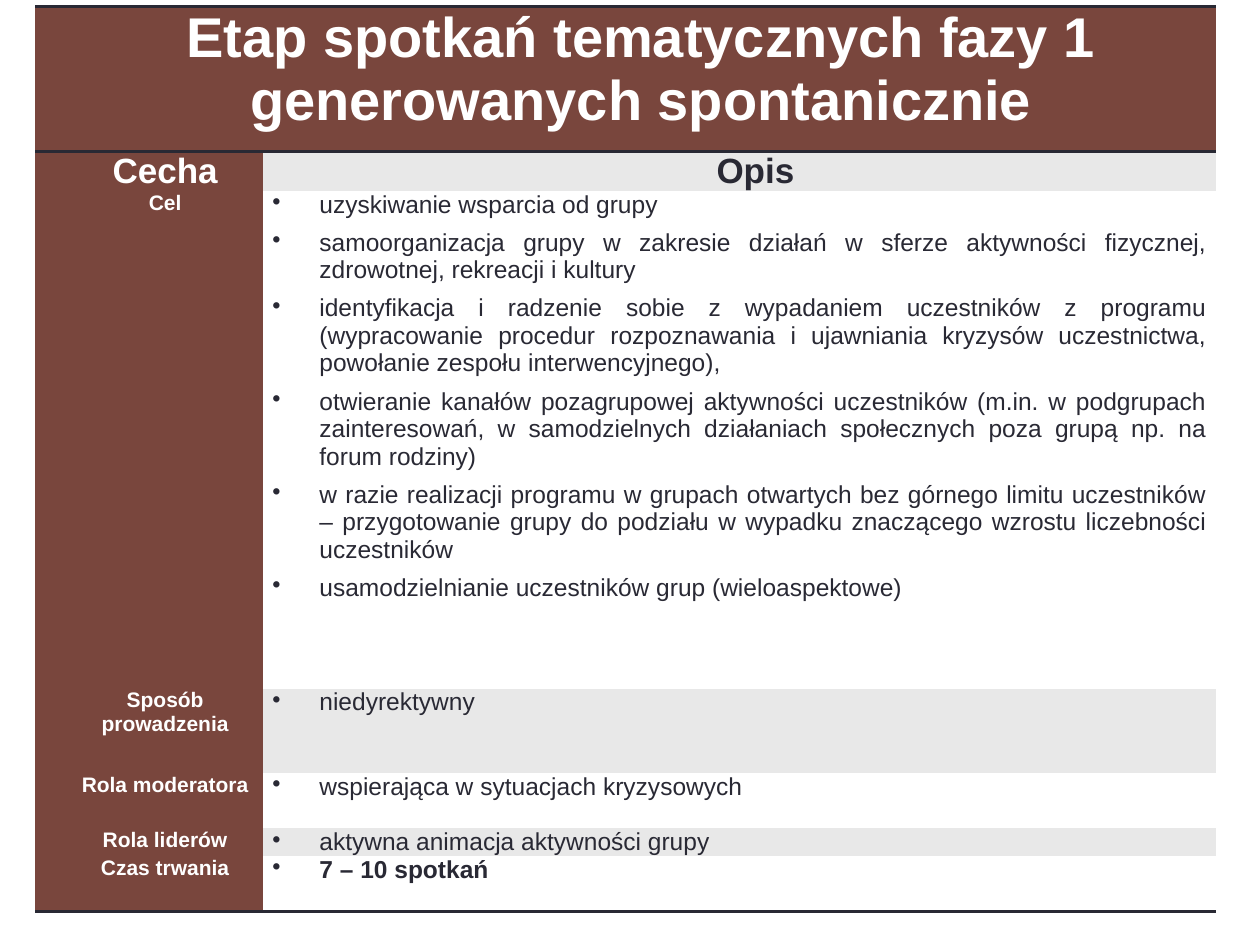
from dataclasses import dataclass

from lxml import etree
from pptx import Presentation
from pptx import util as u
from pptx.dml.color import RGBColor
from pptx.enum import text
from pptx.oxml import ns
from pptx.table import Table, _Cell
from pptx.text.text import _Paragraph

COLOURS = {"brown": "79463D", "ink": "292934", "grey": "E8E8E8", "white": "FFFFFF"}
PLAIN_TABLE = "{2D5ABB26-0587-4C30-8999-92F81FD0307C}"
COLUMN_WIDTHS = (4.6, 19.2)
TITLE = "Etap spotkań tematycznych fazy 1 generowanych spontanicznie"
TITLE_HEIGHT = 2.92
HEADING_HEIGHT = 0.56


@dataclass(frozen=True)
class Feature:
    label: str
    points: tuple[str, ...]
    height: float
    bold: bool = False


FEATURES = (
    Feature(
        "Cel",
        (
            "uzyskiwanie wsparcia od grupy",
            "samoorganizacja grupy w zakresie działań w sferze aktywności fizycznej, "
            "zdrowotnej, rekreacji i kultury",
            "identyfikacja i radzenie sobie z wypadaniem uczestników z programu "
            "(wypracowanie procedur rozpoznawania i ujawniania kryzysów uczestnictwa, "
            "powołanie zespołu interwencyjnego),",
            "otwieranie kanałów pozagrupowej aktywności uczestników (m.in. w podgrupach "
            "zainteresowań, w samodzielnych działaniach społecznych poza grupą np. na "
            "forum rodziny)",
            "w razie realizacji programu w grupach otwartych bez górnego limitu uczestników "
            "– przygotowanie grupy do podziału w wypadku znaczącego wzrostu liczebności "
            "uczestników",
            "usamodzielnianie uczestników grup (wieloaspektowe)",
        ),
        10.03,
    ),
    Feature("Sposób prowadzenia", ("niedyrektywny",), 1.7),
    Feature("Rola moderatora", ("wspierająca w sytuacjach kryzysowych",), 1.12),
    Feature("Rola liderów", ("aktywna animacja aktywności grupy",), 0.56),
    Feature("Czas trwania", ("7 – 10 spotkań",), 1.12, bold=True),
)


def prepare_cell(cell: _Cell, fill: str) -> None:
    cell.margin_left = cell.margin_right = u.Cm(0.18)
    cell.margin_top = cell.margin_bottom = 0
    cell.fill.solid()
    cell.fill.fore_color.rgb = RGBColor.from_string(COLOURS[fill])


def format_run(paragraph: _Paragraph, size: int, colour: str, bold: bool) -> None:
    font = paragraph.runs[0].font
    font.name = "Arial"
    font.size = u.Pt(size)
    font.bold = bold
    font.color.rgb = RGBColor.from_string(COLOURS[colour])


def indent(paragraph: _Paragraph, left: float, first: float = 0) -> None:
    properties = paragraph._p.get_or_add_pPr()
    properties.set("marL", str(u.Cm(left)))
    properties.set("indent", str(u.Cm(first)))


def write_heading(cell: _Cell, words: str, size: int, fill: str, colour: str) -> None:
    prepare_cell(cell, fill)
    cell.text_frame.text = words
    heading = cell.text_frame.paragraphs[0]
    indent(heading, 0.64)
    heading.alignment = text.PP_ALIGN.CENTER
    format_run(heading, size, colour, True)


def write_points(cell: _Cell, feature: Feature, fill: str) -> None:
    prepare_cell(cell, fill)
    cell.text_frame.text = "\n".join(feature.points)
    for index, point in enumerate(cell.text_frame.paragraphs):
        indent(point, 0.95, -0.95)
        bullet = etree.SubElement(point._p.get_or_add_pPr(), ns.qn("a:buChar"))
        bullet.set("char", "•")
        point.alignment = text.PP_ALIGN.JUSTIFY
        if index:
            point.space_before = u.Pt(6)
        format_run(point, 14, "ink", feature.bold)


def rule_row(table: Table, row: int, *sides: str) -> None:
    for column in range(len(COLUMN_WIDTHS)):
        properties = table.cell(row, column)._tc.get_or_add_tcPr()
        for position, side in enumerate(sides):
            line = etree.Element(ns.qn(f"a:{side}"), w=str(u.Pt(2)))
            solid = etree.SubElement(line, ns.qn("a:solidFill"))
            etree.SubElement(solid, ns.qn("a:srgbClr"), val=COLOURS["ink"])
            properties.insert(position, line)


def main() -> None:
    deck = Presentation()
    deck.slide_width, deck.slide_height = u.Cm(25.4), u.Cm(19.05)
    slide = deck.slides.add_slide(deck.slide_layouts[6])

    heights = (TITLE_HEIGHT, HEADING_HEIGHT, *(feature.height for feature in FEATURES))
    frame = slide.shapes.add_table(
        len(heights), len(COLUMN_WIDTHS),
        u.Cm(0.71), u.Cm(0.13), u.Cm(sum(COLUMN_WIDTHS)), u.Cm(sum(heights)),
    )
    table = frame.table
    table.first_row = table.horz_banding = False
    table._tbl.tblPr.find(ns.qn("a:tableStyleId")).text = PLAIN_TABLE
    for column, width in zip(table.columns, COLUMN_WIDTHS):
        column.width = u.Cm(width)
    for row, height in zip(table.rows, heights):
        row.height = u.Cm(height)

    title = table.cell(0, 0)
    title.merge(table.cell(0, 1))
    write_heading(title, TITLE, 32, "brown", "white")
    title.vertical_anchor = text.MSO_ANCHOR.MIDDLE
    title.margin_bottom = u.Cm(0.4)

    write_heading(table.cell(1, 0), "Cecha", 20, "brown", "white")
    write_heading(table.cell(1, 1), "Opis", 20, "grey", "ink")
    for row, feature in enumerate(FEATURES, start=2):
        write_heading(table.cell(row, 0), feature.label, 12, "brown", "white")
        write_points(table.cell(row, 1), feature, "grey" if row % 2 else "white")

    rule_row(table, 0, "lnT", "lnB")
    rule_row(table, len(heights) - 1, "lnB")
    deck.save("out.pptx")


if __name__ == "__main__":
    main()
